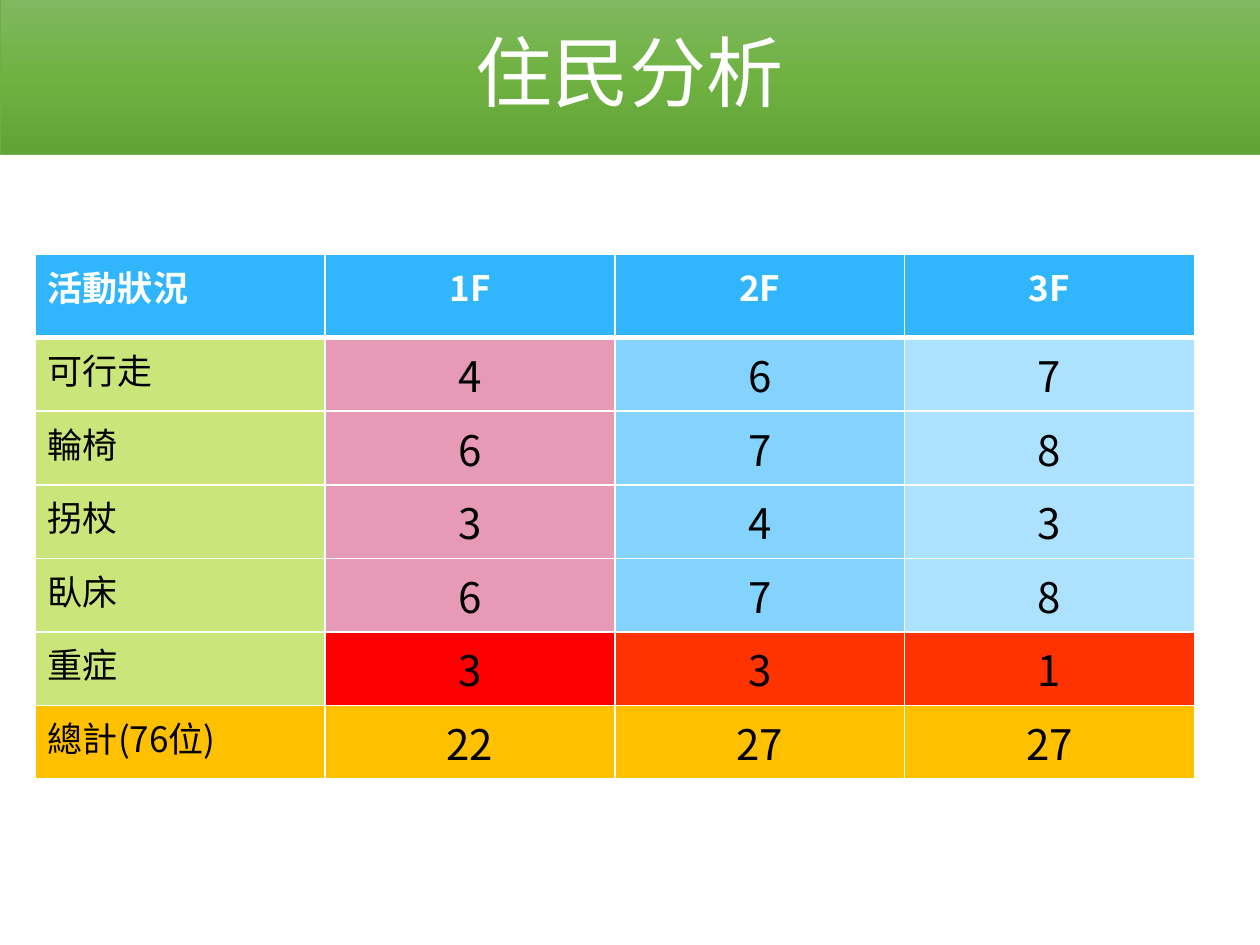
from copy import deepcopy
from dataclasses import dataclass

from lxml.etree import SubElement
from pptx import Presentation
from pptx.dml.color import RGBColor as RGB
from pptx.enum.text import MSO_ANCHOR as Anchor, PP_ALIGN as Align
from pptx.oxml.ns import qn
from pptx.util import Inches, Pt

FONT = "Noto Sans CJK SC"
SLIDE_W, SLIDE_H = 10, 7.5
COL_W = 2.3
COLORS = {
    "white": "FFFFFF", "black": "000000", "header": "31B6FD",
    "label": "CAE67B", "pink": "E69AB5", "blue": "83D3FE",
    "pale": "ADE2FE", "red": "FF0000", "orange": "FF3300",
    "total": "FFC000", "title_line": "70AD47",
    "grad_top": "81B861", "grad_mid": "6FB242", "grad_end": "62A336",
}
HEADER = ("header",) * 4
BODY = ("label", "pink", "blue", "pale")
SEVERE = ("label", "red", "orange", "orange")
TOTAL = ("total",) * 4


@dataclass
class Row:
    texts: tuple
    fills: tuple = BODY
    height: float = 0.5


ROWS = [
    Row(("活動狀況", "1F", "2F", "3F"), HEADER, 0.66),
    Row(("可行走", "4", "6", "7")),
    Row(("輪椅", "6", "7", "8")),
    Row(("拐杖", "3", "4", "3")),
    Row(("臥床", "6", "7", "8"), height=0.44),
    Row(("重症", "3", "3", "1"), SEVERE),
    Row(("總計(76位)", "22", "27", "27"), TOTAL),
]


def color(name: str) -> RGB:
    return RGB.from_string(COLORS[name])


def add_run(p, text: str, size: int, fill: str, bold: bool = False) -> None:
    r = p.add_run()
    r.text = text
    r.font.name = FONT
    r.font.size = Pt(size)
    r.font.bold = bold
    r.font.color.rgb = color(fill)
    SubElement(r.font._element, qn("a:ea"), typeface=FONT)


def format_title(sp, text: str) -> None:
    sp.left, sp.top = 0, Inches(-0.02)
    sp.width, sp.height = Inches(SLIDE_W), Inches(SLIDE_H / 6)
    sp.fill.gradient()
    sp.fill.gradient_angle = 270
    first = sp.fill.gradient_stops[0]._gs
    first.addnext(deepcopy(first))
    for i, name in enumerate(("grad_top", "grad_mid", "grad_end")):
        stop = sp.fill.gradient_stops[i]
        stop.position = i / 2
        stop.color.rgb = color(name)
    sp.line.color.rgb = color("title_line")
    sp.line.width = Pt(0.5)
    tf = sp.text_frame
    tf.vertical_anchor = Anchor.MIDDLE
    p = tf.paragraphs[0]
    p.alignment = Align.CENTER
    p.line_spacing = 0.9
    add_run(p, text, 44, "white")


def add_borders(cell, top: int, bottom: int) -> None:
    tc_pr = cell._tc.get_or_add_tcPr()
    for side, width in (("L", 1), ("R", 1), ("T", top), ("B", bottom)):
        ln = SubElement(tc_pr, qn(f"a:ln{side}"), w=str(Pt(width)))
        fill = SubElement(ln, qn("a:solidFill"))
        SubElement(fill, qn("a:srgbClr"), val=COLORS["white"])


def add_resident_table(s, rows: list[Row]) -> None:
    n_cols = len(rows[0].texts)
    height = sum(row.height for row in rows)
    table = s.shapes.add_table(len(rows), n_cols, Inches(0.28), Inches(2.02),
                               Inches(COL_W * n_cols), Inches(height)).table
    for i, row in enumerate(rows):
        table.rows[i].height = Inches(row.height)
        is_header = i == 0
        for j, (text, fill) in enumerate(zip(row.texts, row.fills)):
            cell = table.cell(i, j)
            add_borders(cell, 3 if i == 1 else 1, 3 if is_header else 1)
            cell.fill.solid()
            cell.fill.fore_color.rgb = color(fill)
            p = cell.text_frame.paragraphs[0]
            p.alignment = Align.CENTER if j else Align.LEFT
            add_run(p, text, 20 if is_header or j == 0 else 24,
                    "white" if is_header else "black", is_header)


def main() -> None:
    prs = Presentation()
    prs.slide_width, prs.slide_height = Inches(SLIDE_W), Inches(SLIDE_H)
    s = prs.slides.add_slide(prs.slide_layouts[5])
    format_title(s.shapes.title, "住民分析")
    add_resident_table(s, ROWS)
    prs.save("out.pptx")


if __name__ == "__main__":
    main()
